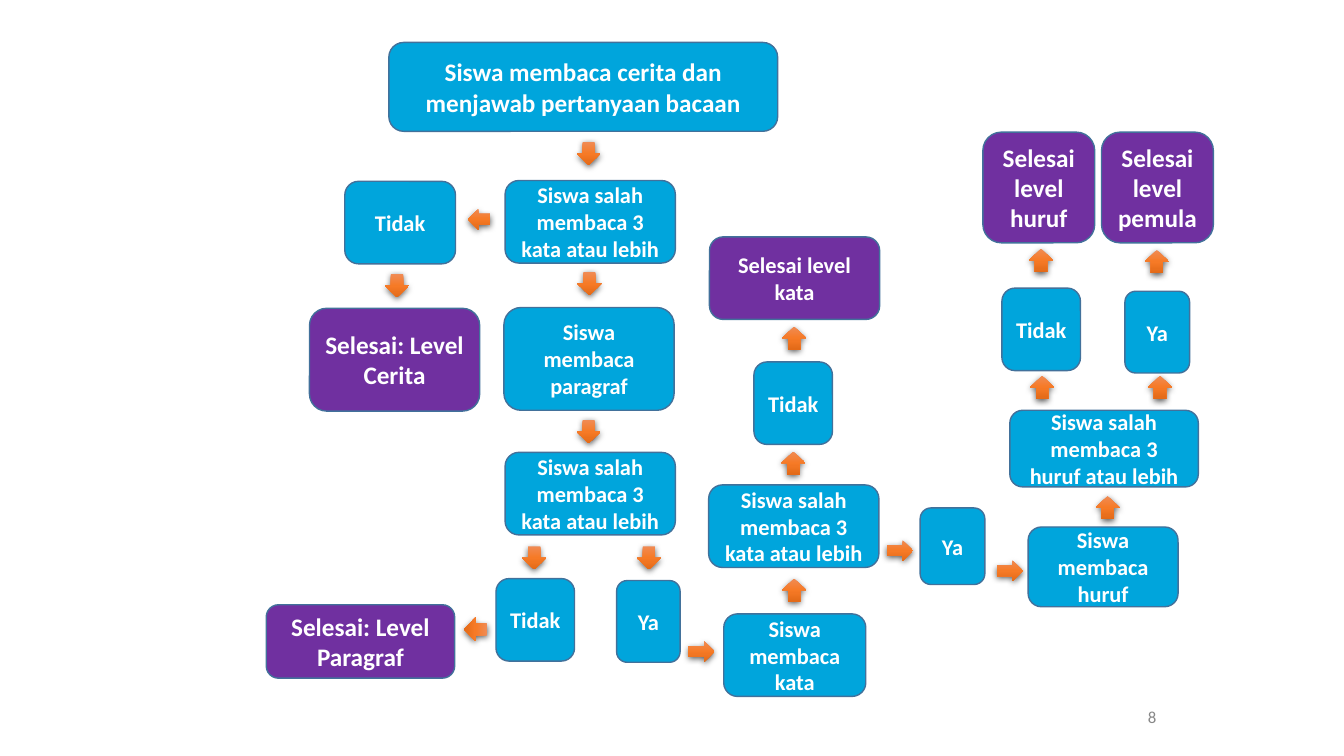
import copy
import lxml.etree
import pptx
import pptx.util
import pptx.dml.color
import pptx.enum.shapes
import pptx.enum.text
import pptx.oxml.ns

Cm = pptx.util.Cm
Pt = pptx.util.Pt
RGBColor = pptx.dml.color.RGBColor
Kind = pptx.enum.shapes.MSO_SHAPE
Align = pptx.enum.text.PP_ALIGN
Anchor = pptx.enum.text.MSO_ANCHOR
qn = pptx.oxml.ns.qn

BLUE = RGBColor(0x00, 0xA5, 0xDC)
PURPLE = RGBColor(0x70, 0x30, 0xA0)
EDGE = RGBColor(0x42, 0x71, 0x9B)
WHITE = RGBColor(0xFF, 0xFF, 0xFF)
GREY = RGBColor(0x88, 0x88, 0x88)
GLOW = ((0, RGBColor(0xF0, 0x8B, 0x54)),
        (0.5, RGBColor(0xF6, 0x7A, 0x26)),
        (1, RGBColor(0xE3, 0x6A, 0x18)))

WORDS = "Siswa salah membaca 3 kata atau lebih"
WIDE = (4.29, 2.08)
TALL = (4.29, 2.59)
SMALL = (1.98, 2.08)
END = (2.82, 2.79)

STEPS = (
    ("Siswa membaca cerita dan menjawab pertanyaan bacaan", 9.8, 1.07, (9.8, 2.24), 18),
    (WORDS, 12.73, 4.55, WIDE, 16),
    ("Tidak", 8.69, 4.57, (2.79, 2.08), 16),
    ("Siswa membaca paragraf", 12.7, 7.75, TALL, 16),
    (WORDS, 12.73, 11.4, WIDE, 16),
    ("Tidak", 12.5, 14.58, SMALL, 16),
    ("Ya", 15.54, 14.63, (1.6, 2.06), 16),
    ("Siswa membaca kata", 18.24, 15.47, (3.58, 2.08), 16),
    (WORDS, 17.86, 12.22, WIDE, 16),
    ("Tidak", 19, 9.12, SMALL, 16),
    ("Ya", 23.19, 12.8, (1.63, 1.93), 16),
    ("Siswa membaca huruf", 25.91, 13.28, (3.78, 2.01), 16),
    ("Siswa salah membaca 3 huruf atau lebih", 25.45, 10.34, (4.75, 1.93), 16),
    ("Tidak", 25.25, 7.26, SMALL, 16),
    ("Ya", 28.35, 7.34, (1.63, 2.06), 16),
)
ENDS = (
    ("Selesai: Level Cerita", 7.8, 7.77, TALL, 18),
    ("Selesai: Level Paragraf", 6.71, 15.24, (4.75, 1.85), 18),
    ("Selesai level kata", 17.88, 5.97, WIDE, 16),
    ("Selesai level huruf", 24.77, 3.33, END, 18),
    ("Selesai level pemula", 27.76, 3.33, END, 18),
)
ARROWS = (
    (Kind.DOWN_ARROW, (0.61, 0.58), 0,
     ((14.53, 3.58), (14.55, 6.86), (9.7, 6.91), (14.53, 10.59),
      (13.16, 13.77), (16.05, 13.77))),
    (Kind.DOWN_ARROW, (0.61, 0.58), 90, ((11.68, 15.57),)),
    (Kind.LEFT_ARROW, (0.56, 0.53), 0, ((11.79, 5.26),)),
    (Kind.RIGHT_ARROW, (0.66, 0.53), 0,
     ((17.35, 16.15), (22.35, 13.61), (25.12, 14.12))),
    (Kind.UP_ARROW, (0.61, 0.58), 0,
     ((19.71, 14.58), (19.69, 11.38), (19.71, 8.23), (27.61, 12.5),
      (25.96, 9.47), (28.93, 9.47), (25.93, 6.27), (28.85, 6.3))),
)


class Chart:
    def __init__(self, slide, face):
        self.slide = slide
        self.face = face

    def place(self, kind, left, top, size):
        shape = self.slide.shapes.add_shape(
            kind, Cm(left), Cm(top), *map(Cm, size))
        shape.shadow.inherit = False
        return shape

    def label(self, shape, text, align, color, **style):
        frame = shape.text_frame
        frame.word_wrap = True
        frame.vertical_anchor = Anchor.MIDDLE
        line = frame.paragraphs[0]
        line.alignment = align
        run = line.add_run()
        run.text = text
        for key, value in {"name": self.face, **style}.items():
            setattr(run.font, key, value)
        run.font.color.rgb = color

    def box(self, text, left, top, size, points, fill):
        shape = self.place(Kind.ROUNDED_RECTANGLE, left, top, size)
        shape.fill.solid()
        shape.fill.fore_color.rgb = fill
        shape.line.color.rgb = EDGE
        shape.line.width = Pt(1)
        self.label(shape, text, Align.CENTER, WHITE,
                   size=Pt(points), bold=True)

    def arrow(self, kind, left, top, size, turn):
        shape = self.place(kind, left, top, size)
        shape.rotation = turn
        shape.line.fill.background()
        fill = shape.fill
        fill.gradient()
        fill.gradient_angle = 270
        props = shape.element.spPr
        stops = props.find(".//" + qn("a:gsLst"))
        stops.append(copy.deepcopy(stops[-1]))
        for stop, (place, color) in zip(fill.gradient_stops, GLOW):
            stop.position = place
            stop.color.rgb = color
        shade = lxml.etree.SubElement(
            props.find(qn("a:effectLst")), qn("a:outerShdw"),
            blurRad=str(Pt(4.5)), dist=str(Pt(1.5)), dir="5400000",
            algn="ctr", rotWithShape="0")
        black = lxml.etree.SubElement(shade, qn("a:srgbClr"), val="000000")
        lxml.etree.SubElement(black, qn("a:alpha"), val="63000")

    def note(self, text, left, top, size):
        shape = self.slide.shapes.add_textbox(
            Cm(left), Cm(top), *map(Cm, size))
        self.label(shape, text, Align.RIGHT, GREY, size=Pt(12))


def main():
    deck = pptx.Presentation()
    deck.slide_width = Cm(33.87)
    deck.slide_height = Cm(19.05)
    chart = Chart(deck.slides.add_slide(deck.slide_layouts[6]), "Calibri")
    chart.note("8", 27.76, 17.53, (1.63, 1.07))
    for fill, group in ((BLUE, STEPS), (PURPLE, ENDS)):
        for item in group:
            chart.box(*item, fill)
    for kind, size, turn, spots in ARROWS:
        for left, top in spots:
            chart.arrow(kind, left, top, size, turn)
    deck.save("out.pptx")


if __name__ == "__main__":
    main()
